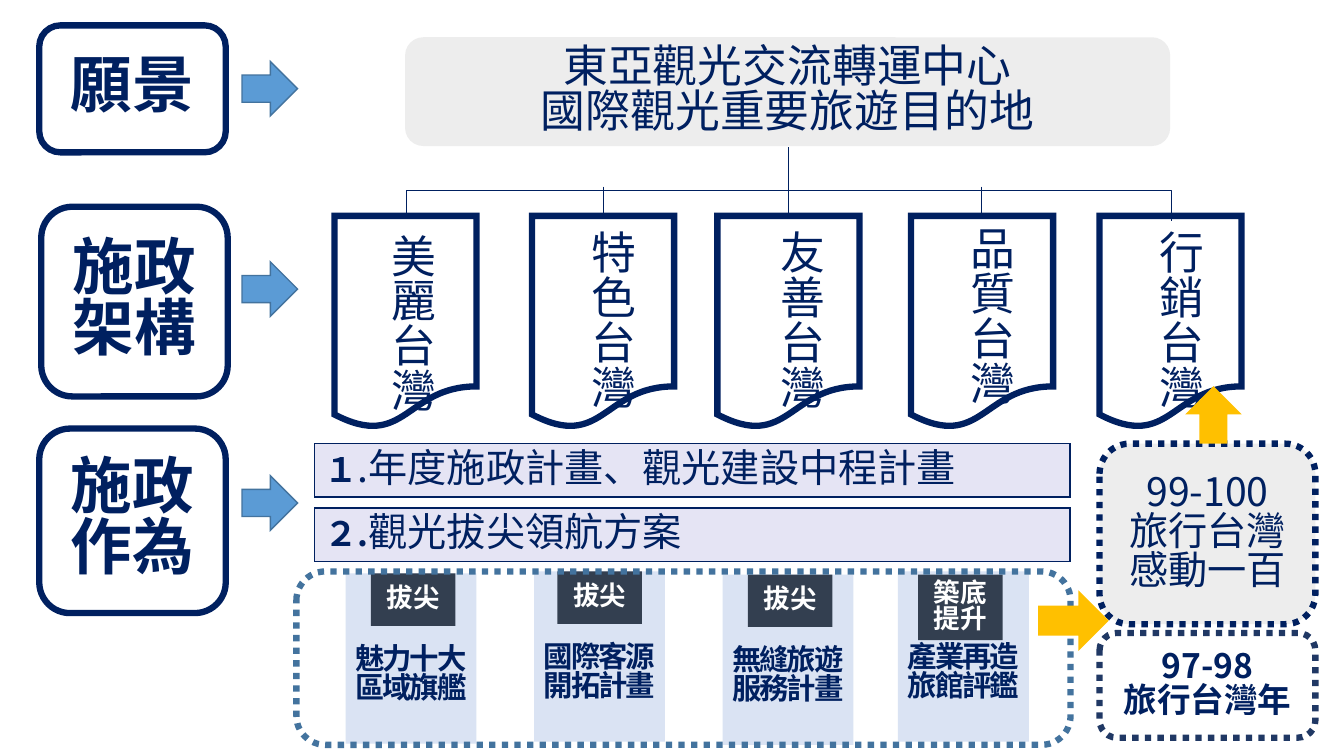
"""Builds the tourism policy framework slide: vision, structure and actions."""
from lxml.etree import SubElement
from pptx import Presentation
from pptx.dml.color import RGBColor
from pptx.enum.dml import MSO_LINE
from pptx.enum.shapes import MSO_CONNECTOR, MSO_SHAPE as SHAPE
from pptx.enum.text import MSO_ANCHOR as ANCHOR, PP_ALIGN as ALIGN
from pptx.oxml.ns import qn
from pptx.util import Cm, Pt

FONT = "Noto Sans CJK SC"
COLORS = {
    "navy": "002060", "midnight": "203864", "steel": "43739E", "blue": "5B9BD5",
    "gray": "EDEDED", "lavender": "E5E4F4", "ice": "DAE3F3", "slate": "333F50",
    "gold": "FFC000", "white": "FFFFFF",
}


def add_box(kind, left, top, width, height, fill=None, line=None, weight=4.5, dotted=False):
    box = slide.shapes.add_shape(kind, Cm(left), Cm(top), Cm(width), Cm(height))
    box.shadow.inherit = False
    if fill:
        box.fill.solid()
        box.fill.fore_color.rgb = RGBColor.from_string(COLORS[fill])
    else:
        box.fill.background()
    if line:
        box.line.color.rgb = RGBColor.from_string(COLORS[line])
        box.line.width = Pt(weight)
        if dotted:
            box.line.dash_style = MSO_LINE.ROUND_DOT
        SubElement(box.line._get_or_add_ln(), qn("a:miter"), lim="800000")
    else:
        box.line.fill.background()
    return box


def write(box, text, size, color="navy", bold=False, align=ALIGN.CENTER, spacing=0.83, tracking=0):
    frame = box.text_frame
    frame.word_wrap = True
    frame.vertical_anchor = ANCHOR.MIDDLE
    frame.text = text
    for paragraph in frame.paragraphs:
        paragraph.alignment = align
        paragraph.line_spacing = spacing
        for run in paragraph.runs:
            run.font.size = Pt(size)
            run.font.bold = bold
            run.font.name = FONT
            run.font.color.rgb = RGBColor.from_string(COLORS[color])
            properties = run._r.get_or_add_rPr()
            SubElement(properties, qn("a:ea"), typeface=FONT)
            if tracking:
                properties.set("spc", str(tracking))
    return frame


prs = Presentation()
prs.slide_width, prs.slide_height = Cm(33.87), Cm(19.05)
slide = prs.slides.add_slide(prs.slide_layouts[6])

for stage, left, top, height in (
    ("願景", 0.99, 0.64, 3.2),
    ("施政\n架構", 1.04, 5.21, 4.78),
    ("施政作為", 0.99, 10.8, 4.65),
):
    stage_box = add_box(SHAPE.ROUNDED_RECTANGLE, left, top, 4.7, height, line="navy")
    write(stage_box, stage, 44, bold=True)

vision = add_box(SHAPE.ROUNDED_RECTANGLE, 10.21, 0.94, 19.28, 2.74, fill="gray")
write(vision, "東亞觀光交流轉運中心\n國際觀光重要旅遊目的地", 32)

for pillar, text_left, text_top, page_left in (
    ("美麗台灣", 9.25, 5.64, 8.43),
    ("特色台灣", 14.27, 5.56, 13.41),
    ("友善台灣", 19.05, 5.56, 18.08),
    ("品質台灣", 23.83, 5.46, 22.96),
    ("行銷台灣", 28.58, 5.56, 27.71),
):
    label = slide.shapes.add_textbox(Cm(text_left), Cm(text_top), Cm(1.83), Cm(5))
    frame = write(label, pillar, 32, align=ALIGN.LEFT, spacing=1.0)
    frame.vertical_anchor = ANCHOR.TOP
    frame.margin_left = frame.margin_right = frame.margin_bottom = 0
    frame.margin_top = Cm(0.25)
    frame._txBody.bodyPr.set("vert", "eaVert")
    add_box(SHAPE.FLOWCHART_DOCUMENT, page_left, 5.44, 3.58, 5.36, line="navy")

for x, start in ((19.86, 3.71), (15.21, 4.7), (24.74, 4.7)):
    branch = slide.shapes.add_connector(MSO_CONNECTOR.STRAIGHT, Cm(x), Cm(start), Cm(x), Cm(5.44))
    branch.line.color.rgb = RGBColor.from_string(COLORS["navy"])
    branch.line.width = Pt(0.5)
    SubElement(branch._element.spPr, qn("a:effectLst"))

bracket_path = slide.shapes.build_freeform(Cm(10.24), Cm(5.44))
bracket_path.add_line_segments(
    [(Cm(10.24), Cm(4.8)), (Cm(29.51), Cm(4.8)), (Cm(29.51), Cm(5.56))], close=False)
bracket = bracket_path.convert_to_shape()
bracket.shadow.inherit = False
bracket.fill.background()
bracket.line.color.rgb = RGBColor.from_string(COLORS["navy"])
bracket.line.width = Pt(0.5)

for top, number, plan in (
    (11.18, "１", ".年度施政計畫、觀光建設中程計畫"),
    (12.8, "２.", "觀光拔尖領航方案"),
):
    bar = add_box(SHAPE.RECTANGLE, 7.92, top, 19.05, 1.35, fill="lavender", line="navy", weight=1)
    bar.text_frame.paragraphs[0].add_run()
    frame = write(bar, number, 24, bold=True, align=ALIGN.LEFT)
    plan_run = frame.paragraphs[0].add_run()
    plan_run.text = plan
    plan_run.font.size = Pt(28)
    plan_run.font.bold = False
    plan_run.font.name = FONT
    plan_run.font.color.rgb = RGBColor.from_string(COLORS["navy"])
    SubElement(plan_run._r.get_or_add_rPr(), qn("a:ea"), typeface=FONT)

for program, left, top, badge, badge_left, badge_top, badge_height in (
    ("魅力十大\n區域旗艦", 8.71, 14.45, "拔尖", 9.35, 14.45, 1.32),
    ("國際客源\n開拓計畫", 13.46, 14.4, "拔尖", 14.05, 14.4, 1.32),
    ("無縫旅遊\n服務計畫", 18.21, 14.48, "拔尖", 18.85, 14.48, 1.32),
    ("產業再造\n旅館評鑑", 22.63, 14.4, "築底提升", 23.14, 14.48, 1.65),
):
    card = add_box(SHAPE.RECTANGLE, left, top, 3.3, 4.29, fill="ice")
    frame = write(card, program, 21, bold=True, tracking=-150)
    frame.margin_left = frame.margin_right = Cm(0.1)
    frame.margin_top = Cm(0.95)
    badge_box = add_box(SHAPE.RECTANGLE, badge_left, badge_top, 2.13, badge_height, fill="slate")
    write(badge_box, badge, 19, color="white", bold=True)

programs_frame = add_box(SHAPE.ROUNDED_RECTANGLE, 7.47, 14.4, 19.51, 4.37, line="steel", dotted=True)
visit_year = add_box(SHAPE.ROUNDED_RECTANGLE, 27.71, 15.95, 5.44, 2.64, line="midnight", dotted=True)
write(visit_year, "97-98\n旅行台灣年", 24, bold=True)
centennial = add_box(
    SHAPE.ROUNDED_RECTANGLE, 27.71, 11.18, 5.44, 4.55, fill="gray", line="navy", dotted=True)
write(centennial, "99-100\n旅行台灣\n感動一百", 28)

add_box(SHAPE.RIGHT_ARROW, 26.16, 14.88, 1.78, 1.52, fill="gold")
add_box(SHAPE.UP_ARROW, 29.87, 9.73, 1.42, 1.45, fill="gold")
for top in (1.55, 6.6, 11.99):
    add_box(SHAPE.RIGHT_ARROW, 6.1, top, 1.4, 1.37, fill="blue", line="steel", weight=1)

prs.save("out.pptx")
